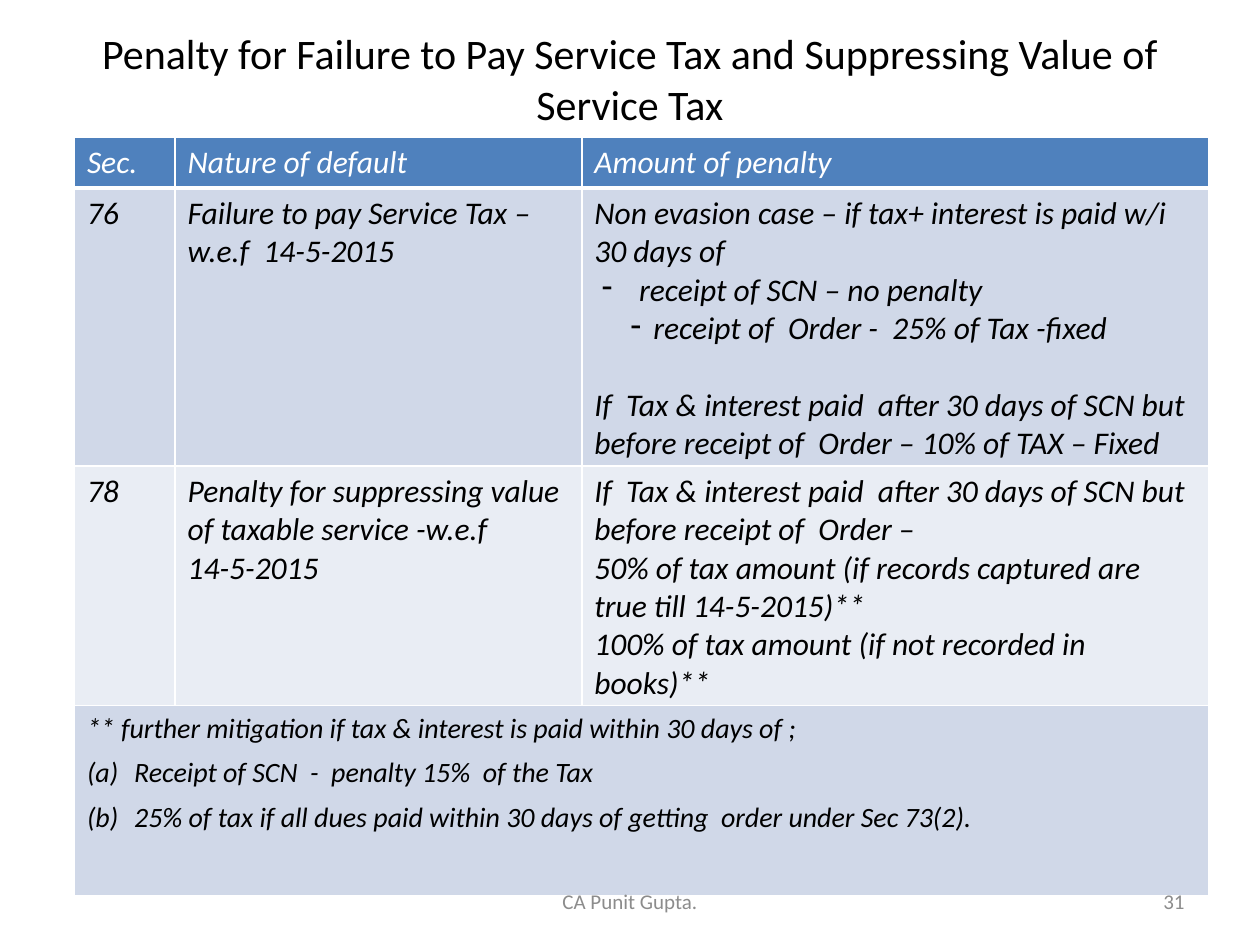
"""Build a slide with a table of service tax penalties."""
import pptx
import pptx.util
import pptx.dml.color
import pptx.enum.text
import pptx.oxml
import pptx.oxml.ns

Cm = pptx.util.Cm
Pt = pptx.util.Pt
ALIGN = pptx.enum.text.PP_ALIGN
ANCHOR = pptx.enum.text.MSO_ANCHOR
BLACK, WHITE, GREY = "000000", "FFFFFF", "8C8C8C"
BLUE, PALE, LIGHT = "4F81BD", "D0D8E8", "E9EDF4"
DASH = '<a:buChar {} char="-"/>'
LETTER = '<a:buAutoNum {} type="alphaLcParenBoth"/>'

HEAD = ["Sec.", "Nature of default", "Amount of penalty"]
LATE = "If  Tax & interest paid  after 30 days of SCN but before receipt of  Order –"
BODY = [
    ["76", "Failure to pay Service Tax – w.e.f  14-5-2015", [
        "Non evasion case – if tax+ interest is paid w/i 30 days of",
        {"text": "receipt of SCN – no penalty", "mark": DASH, "left": 0.9, "hang": 0.75},
        {"text": "receipt of  Order -  25% of Tax -fixed", "mark": DASH,
         "left": 1.19, "hang": 0.46},
        {"text": LATE + " 10% of TAX – Fixed", "gap": 22}]],
    ["78", ["Penalty for suppressing value of taxable service -w.e.f", "14-5-2015"], [
        LATE,
        "50% of tax amount (if records captured are true till 14-5-2015)**",
        "100% of tax amount (if not recorded in books)**"]],
]
NOTES = [
    {"text": "** further mitigation if tax & interest is paid within 30 days of ;", "gap": 6},
    {"text": "Receipt of SCN  -  penalty 15%  of the Tax", "gap": 6,
     "mark": LETTER, "left": 0.95, "hang": 0.95},
    {"text": "25% of tax if all dues paid within 30 days of getting  order under Sec 73(2).",
     "gap": 6, "mark": LETTER, "left": 0.95, "hang": 0.95},
]


def paint(target, color):
    """Set a font or fill colour from a hex string."""
    target.rgb = pptx.dml.color.RGBColor.from_string(color)


def style(para, size, color, italic=False):
    """Set the font of a paragraph."""
    font = para.font
    font.name, font.size = "Calibri", Pt(size)
    font.bold, font.italic = False, italic
    paint(font.color, color)


def indent(para, mark, left, hang):
    """Give a paragraph a bullet and a hanging indent in centimetres."""
    props = para._p.get_or_add_pPr()
    props.set("marL", str(Cm(left)))
    props.set("indent", str(-Cm(hang)))
    space = pptx.oxml.ns.nsdecls("a")
    props.insert_element_before(pptx.oxml.parse_xml(mark.format(space)),
                                "a:tabLst", "a:defRPr", "a:extLst")


def write(frame, items, size, color):
    """Write strings or marked items as italic paragraphs."""
    items = [items] if isinstance(items, str) else items
    for i, item in enumerate(items):
        item = {"text": item} if isinstance(item, str) else item
        para = frame.add_paragraph() if i else frame.paragraphs[0]
        para.text = item["text"]
        style(para, size, color, True)
        if "gap" in item:
            para.space_before = Pt(item["gap"])
        if "mark" in item:
            indent(para, item["mark"], item["left"], item["hang"])


def dress(cell, color, base=1):
    """Give a cell white borders and a solid fill."""
    props = cell._tc.get_or_add_tcPr()
    for side, width in (("L", 1), ("R", 1), ("T", 1), ("B", base)):
        props.append(pptx.oxml.parse_xml(
            f'<a:ln{side} {pptx.oxml.ns.nsdecls("a")} w="{Pt(width)}">'
            f'<a:solidFill><a:srgbClr val="{WHITE}"/></a:solidFill></a:ln{side}>'))
    cell.fill.solid()
    paint(cell.fill.fore_color, color)


def label(slide, text, box, size, color, align):
    """Add a line of text in a box, centred vertically."""
    frame = slide.shapes.add_textbox(*map(Cm, box)).text_frame
    frame.word_wrap = True
    frame.vertical_anchor = ANCHOR.MIDDLE
    para = frame.paragraphs[0]
    para.text, para.alignment = text, align
    style(para, size, color)


def grid(slide):
    """Add the penalty table."""
    cols, rows = [2.03, 8.2, 12.63], [0.94, 5.11, 4.42, 3.84]
    box = (1.5, 2.77, sum(cols), sum(rows))
    table = slide.shapes.add_table(len(rows), len(cols), *map(Cm, box)).table
    table.first_row = table.horz_banding = False
    for col, width in zip(table.columns, cols):
        col.width = Cm(width)
    for row, height in zip(table.rows, rows):
        row.height = Cm(height)
    for r, color in enumerate([BLUE, PALE, LIGHT, PALE]):
        for cell in table.rows[r].cells:
            dress(cell, color, 1 if r else 3)
    for r, texts in enumerate([HEAD] + BODY):
        for c, text in enumerate(texts):
            write(table.cell(r, c).text_frame, text, 18, BLACK if r else WHITE)
    note = table.cell(3, 0)
    note.merge(table.cell(3, 2))
    write(note.text_frame, NOTES, 16, BLACK)


def main():
    """Build and save the slide."""
    deck = pptx.Presentation()
    deck.slide_width, deck.slide_height = Cm(25.4), Cm(19.05)
    slide = deck.slides.add_slide(deck.slide_layouts[6])
    label(slide, "Penalty for Failure to Pay Service Tax and Suppressing Value of Service Tax",
          (1.27, 0.76, 22.86, 1.63), 24, BLACK, ALIGN.CENTER)
    grid(slide)
    label(slide, "CA Punit Gupta.", (8.68, 17.66, 8.04, 1.01), 12, GREY, ALIGN.CENTER)
    label(slide, "31", (18.2, 17.66, 5.93, 1.01), 12, GREY, ALIGN.RIGHT)
    deck.save("out.pptx")


if __name__ == "__main__":
    main()
